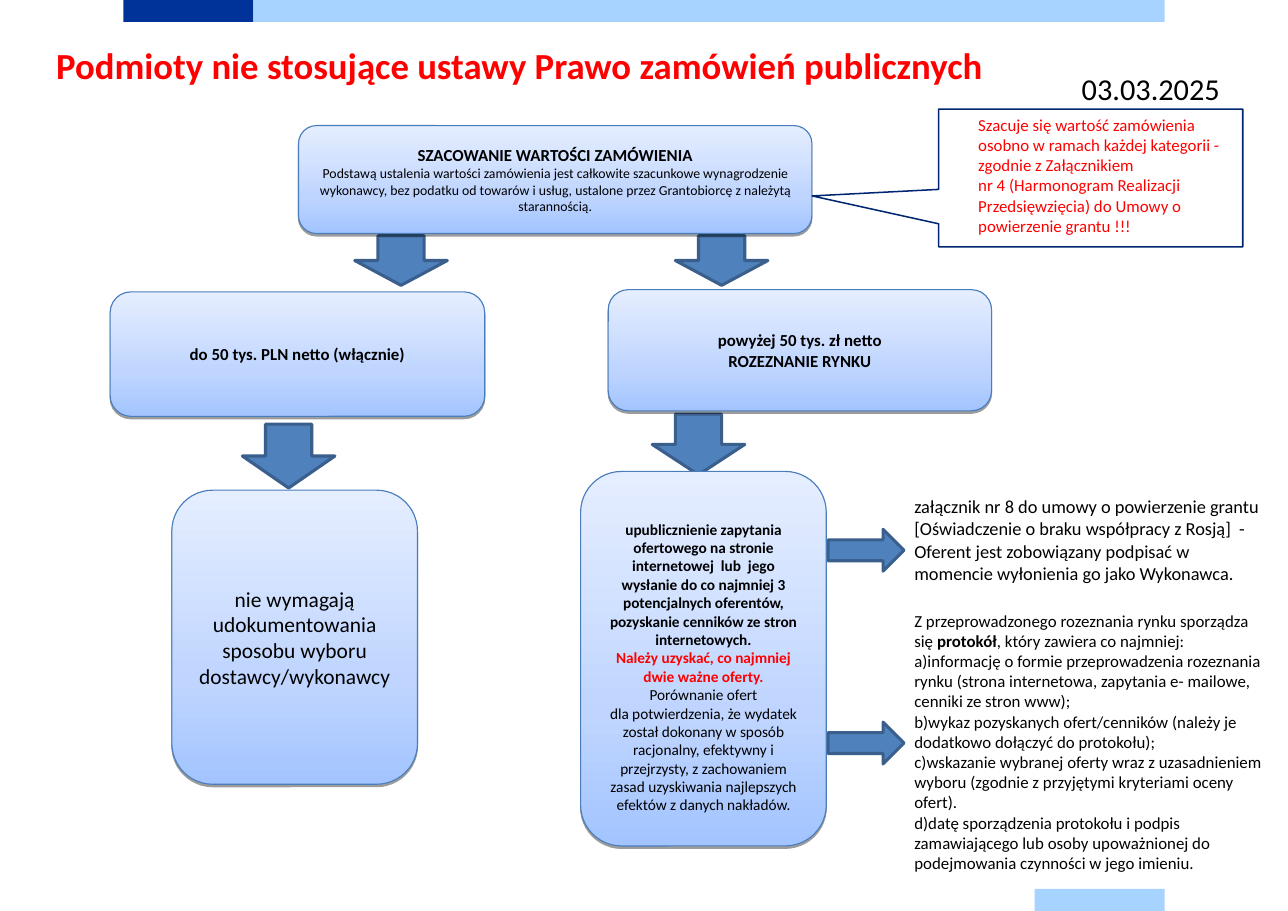
from dataclasses import dataclass

from pptx import Presentation
from pptx.dml.color import RGBColor
from pptx.enum.shapes import MSO_SHAPE
from pptx.enum.text import MSO_ANCHOR, MSO_AUTO_SIZE, PP_ALIGN
from pptx.oxml import parse_xml
from pptx.oxml.ns import nsdecls, qn
from pptx.util import Inches, Pt

RECT, ROUND = MSO_SHAPE.RECTANGLE, MSO_SHAPE.ROUNDED_RECTANGLE
DOWN, CALLOUT = MSO_SHAPE.DOWN_ARROW, MSO_SHAPE.RECTANGULAR_CALLOUT
TOP, MIDDLE = MSO_ANCHOR.TOP, MSO_ANCHOR.MIDDLE
LEFT, CENTER = PP_ALIGN.LEFT, PP_ALIGN.CENTER
NO_FIT = MSO_AUTO_SIZE.NONE


@dataclass(frozen=True)
class Theme:
    font: str = "Calibri"
    text: str = "000000"
    accent: str = "FF0000"
    navy: str = "003399"
    sky: str = "A6D3FF"
    arrow: str = "4F81BD"
    arrow_line: str = "3A5F8C"
    box_line: str = "4A7EBB"
    callout_line: str = "002671"
    gradient: tuple = ((0, "A3C4FF"), (35, "BFD5FF"), (100, "E5EEFF"))
    title: float = 24
    date: float = 19.8
    large: float = 14
    note: float = 12
    body: float = 11
    detail: float = 10
    small: float = 9


T = Theme()


@dataclass(frozen=True)
class Run:
    text: str
    size: float = T.body
    bold: bool = False
    color: str = T.text


@dataclass(frozen=True)
class Block:
    at: tuple
    paragraphs: list
    top_margin: float = 0.05


@dataclass(frozen=True)
class Arrow:
    at: tuple
    rotation: int = 0


def lengths(at: tuple) -> list:
    return [Inches(v) for v in at]


def write(sp, paragraphs: list, align, anchor, top_margin: float = 0.05) -> None:
    """Fill a shape with paragraphs, each one a list of runs."""
    tf = sp.text_frame
    frame = dict(word_wrap=True, auto_size=NO_FIT, vertical_anchor=anchor,
                 margin_top=Inches(top_margin))
    for name, value in frame.items():
        setattr(tf, name, value)
    for i, runs in enumerate(paragraphs):
        p = tf.add_paragraph() if i else tf.paragraphs[0]
        p.alignment = align
        for run in runs:
            for j, line in enumerate(run.text.split("\n")):
                if j:
                    p.add_line_break()
                r = p.add_run()
                r.text = line
                values = dict(name=T.font, size=Pt(run.size), bold=run.bold)
                for name, value in values.items():
                    setattr(r.font, name, value)
                r.font.color.rgb = RGBColor.from_string(run.color)


def add_shape(slide, kind, at: tuple, fill: str = "", line: str = "", width: float = 0):
    sp = slide.shapes.add_shape(kind, *lengths(at))
    sp.shadow.inherit = False
    if fill:
        sp.fill.solid()
        sp.fill.fore_color.rgb = RGBColor.from_string(fill)
    else:
        sp.fill.background()
    if line:
        sp.line.color.rgb = RGBColor.from_string(line)
        sp.line.width = Pt(width)
    else:
        sp.line.fill.background()
    return sp


def add_box(slide, box: Block) -> None:
    """Rounded box with a vertical gradient and a short drop shadow."""
    sp = add_shape(slide, ROUND, box.at, T.sky, T.box_line, 0.75)
    stops = "".join(f'<a:gs pos="{pos * 1000}"><a:srgbClr val="{color}"/></a:gs>'
                    for pos, color in T.gradient)
    props = sp._element.spPr
    props.replace(props.find(qn("a:solidFill")), parse_xml(
        f'<a:gradFill {nsdecls("a")} rotWithShape="1"><a:gsLst>{stops}</a:gsLst>'
        '<a:lin ang="16200000" scaled="0"/></a:gradFill>'))
    props.find(qn("a:effectLst")).append(parse_xml(
        f'<a:outerShdw {nsdecls("a")} blurRad="0" dist="{Pt(1.6)}" dir="5400000" '
        'rotWithShape="0"><a:srgbClr val="000000"><a:alpha val="38000"/></a:srgbClr>'
        '</a:outerShdw>'))
    write(sp, box.paragraphs, CENTER, MIDDLE, box.top_margin)


def add_arrow(slide, arrow: Arrow) -> None:
    sp = add_shape(slide, DOWN, arrow.at, T.arrow, T.arrow_line, 2)
    sp.rotation = arrow.rotation


BARS = [((1.12, 0, 1.18, 0.2), T.navy),
        ((2.3, 0, 8.27, 0.2), T.sky),
        ((9.39, 8.07, 1.18, 0.2), T.sky)]

ARROWS = [Arrow((3.22, 2.14, 0.84, 0.45)), Arrow((6.13, 2.14, 0.84, 0.45)),
          Arrow((2.2, 3.85, 0.84, 0.58)), Arrow((5.92, 3.76, 0.84, 0.55)),
          Arrow((7.67, 4.65, 0.38, 0.69), 270), Arrow((7.67, 6.4, 0.38, 0.69), 270)]

BOXES = [
    Block((2.71, 1.14, 4.66, 0.98), [
        [Run("SZACOWANIE WARTOŚCI ZAMÓWIENIA", bold=True)],
        [Run("Podstawą ustalenia wartości zamówienia jest całkowite szacunkowe "
             "wynagrodzenie wykonawcy, bez podatku od towarów i usług, ustalone przez "
             "Grantobiorcę z należytą starannością.", T.small)]]),
    Block((1, 2.65, 3.4, 1.13), [[Run("do 50 tys. PLN netto (włącznie)", bold=True)]]),
    Block((5.52, 2.63, 3.48, 1.1),
          [[Run("powyżej 50 tys. zł netto\nROZEZNANIE RYNKU", bold=True)]]),
    Block((1.56, 4.45, 2.23, 2.67),
          [[Run("nie wymagają udokumentowania sposobu wyboru dostawcy/wykonawcy", T.large)]]),
    Block((5.27, 4.28, 2.23, 3.4), [
        [Run("upublicznienie zapytania ofertowego na stronie internetowej  lub  jego "
             "wysłanie do co najmniej 3 potencjalnych oferentów, pozyskanie cenników "
             "ze stron internetowych.", T.detail, True)],
        [Run("Należy uzyskać, co najmniej dwie ważne oferty.", T.detail, True, T.accent)],
        [Run("Porównanie ofert", T.detail)],
        [Run("dla potwierdzenia, że wydatek został dokonany w sposób racjonalny, "
             "efektywny i przejrzysty, z zachowaniem zasad uzyskiwania najlepszych "
             "efektów z danych nakładów.", T.detail)]], top_margin=0.2),
]

NOTES = [
    Block((9.72, 0.59, 1.97, 0.4), [[Run("03.03.2025", T.date)]]),
    Block((8.78, 0.99, 2.62, 1.21), [
        [Run("Szacuje się wartość zamówienia osobno w ramach każdej kategorii - "
             "zgodnie z Załącznikiem", color=T.accent)],
        [Run("nr 4 (Harmonogram Realizacji Przedsięwzięcia) do Umowy o powierzenie "
             "grantu !!!", color=T.accent)]]),
    Block((8.2, 4.45, 3.39, 0.91), [
        [Run("załącznik nr 8 do umowy o powierzenie grantu [Oświadczenie o braku "
             "współpracy z Rosją]  - Oferent jest zobowiązany podpisać w momencie "
             "wyłonienia go jako Wykonawca.", T.note)]]),
    Block((8.2, 5.49, 3.42, 2.51), [
        [Run("Z przeprowadzonego rozeznania rynku sporządza się "),
         Run("protokół", bold=True), Run(", który zawiera co najmniej:")],
        [Run("a)informację o formie przeprowadzenia rozeznania rynku (strona "
             "internetowa, zapytania e- mailowe, cenniki ze stron www);")],
        [Run("b)wykaz pozyskanych ofert/cenników (należy je dodatkowo dołączyć do "
             "protokołu);")],
        [Run("c)wskazanie wybranej oferty wraz z uzasadnieniem wyboru (zgodnie z "
             "przyjętymi kryteriami oceny ofert).")],
        [Run("d)datę sporządzenia protokołu i podpis zamawiającego lub osoby "
             "upoważnionej do podejmowania czynności w jego imieniu.")]]),
]


def main() -> None:
    prs = Presentation()
    prs.slide_width, prs.slide_height = Inches(11.69), Inches(8.27)
    slide = prs.slides.add_slide(prs.slide_layouts[5])

    # Title
    title = slide.shapes.title
    title.left, title.top, title.width, title.height = lengths((0.41, 0.34, 9.5, 0.5))
    write(title, [[Run("Podmioty nie stosujące ustawy Prawo zamówień publicznych",
                       T.title, True, T.accent)]], LEFT, TOP)

    # Page bars
    for at, color in BARS:
        add_shape(slide, RECT, at, color)

    # Flow: boxes lie over the arrow tips
    for arrow in ARROWS:
        add_arrow(slide, arrow)
    for box in BOXES:
        add_box(slide, box)

    # Callout and side notes
    callout = add_shape(slide, CALLOUT, (8.52, 0.99, 2.76, 1.25), line=T.callout_line, width=1)
    callout.adjustments[0], callout.adjustments[1] = -0.916, 0.131
    for note in NOTES:
        write(slide.shapes.add_textbox(*lengths(note.at)), note.paragraphs, LEFT, TOP)

    prs.save("out.pptx")


if __name__ == "__main__":
    main()
